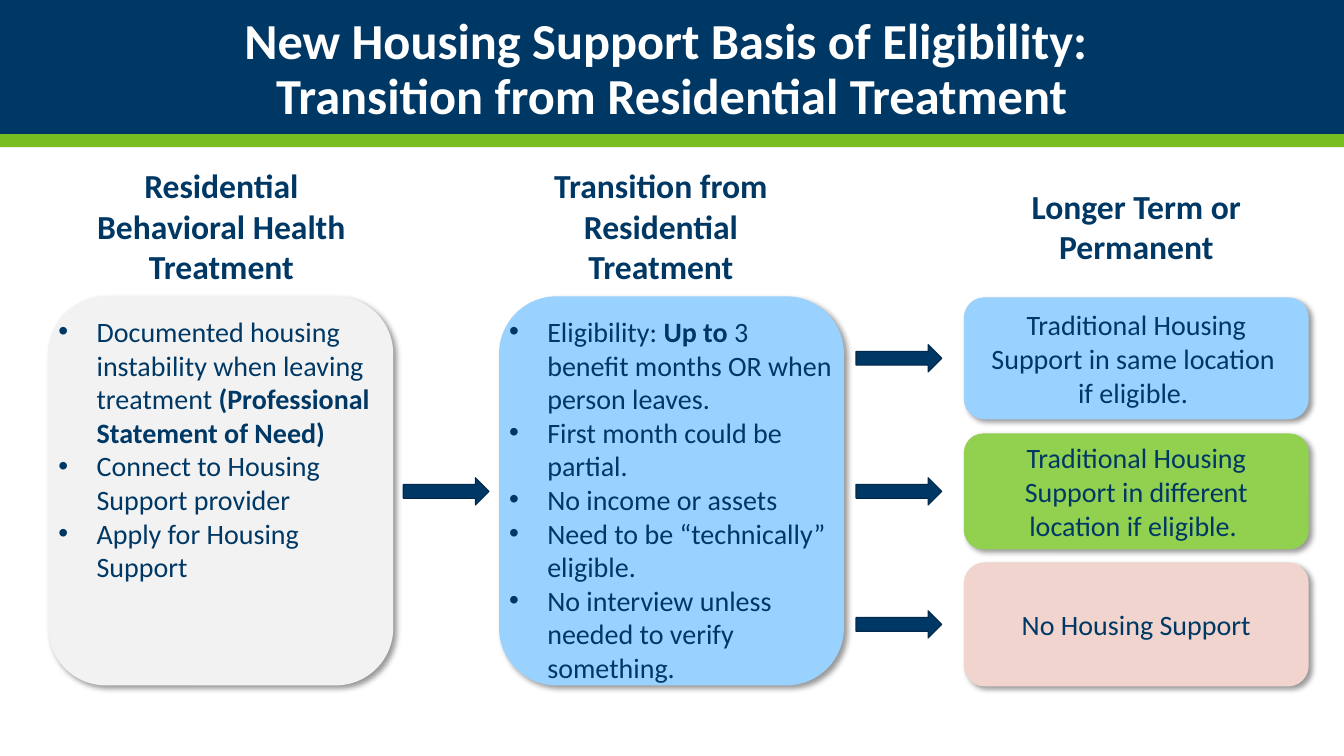
from lxml import etree
from pptx import Presentation
from pptx.dml.color import RGBColor
from pptx.enum import shapes, text
from pptx.oxml.ns import qn
from pptx.util import Inches, Pt

# Content: a paragraph is a list of (text, bold) runs
TITLE = "New Housing Support Basis of Eligibility: \vTransition from Residential Treatment"
HEADINGS = [  # text, left, top, width, height
    ("Residential Behavioral Health Treatment", 0.77, 1.59, 2.85, 1.31),
    ("Transition from Residential Treatment", 5.13, 1.59, 2.85, 1.31),
    ("Longer Term or Permanent", 10.13, 1.79, 2.28, 0.91),
]
STAGES = [  # left, colour, bullets
    (0.48, "grey", [
        [("Documented housing instability when leaving treatment ", False),
         ("(Professional Statement of Need)", True)],
        [("Connect to Housing Support provider", False)],
        [("Apply for Housing Support", False)],
    ]),
    (4.95, "blue", [
        [("Eligibility: ", False), ("Up to ", True),
         ("3 benefit months OR when person leaves.", False)],
        [("First month could be partial.", False)],
        [("No income or assets", False)],
        [("Need to be “technically” eligible.", False)],
        [("No interview unless needed to verify something.", False)],
    ]),
]
OUTCOMES = [  # top, height, colour, lines
    (2.95, 1.21, "blue", ["Traditional Housing Support in same location ", "if eligible. "]),
    (4.3, 1.15, "green", ["Traditional Housing Support in different location if eligible. "]),
    (5.58, 1.23, "pink", ["No Housing Support"]),
]
COLORS = dict(navy="003865", lime="78BE21", grey="F2F2F2", blue="99D1FF", green="92D050",
              pink="F0D4CD", edge="00294B", white="FFFFFF")
BOX_W, STAGE_TOP, STAGE_H, OUTCOME_LEFT = 3.42, 2.94, 3.86, 9.56
ARROW_W, ARROW_H, ARROW_MID, ARROW_STEP = 0.85, 0.27, 4.74, 1.32
KIND = shapes.MSO_SHAPE
CENTER, LEFT = text.PP_ALIGN.CENTER, text.PP_ALIGN.LEFT

prs = Presentation()
prs.slide_width, prs.slide_height = Inches(13.33), Inches(7.5)
s = prs.slides.add_slide(prs.slide_layouts[6])


def rgb(name):
    return RGBColor.from_string(COLORS[name])


def add_shape(kind, box, fill, line=None, shadow=False):
    sp = s.shapes.add_shape(kind, *map(Inches, box))
    sp.fill.solid()
    sp.fill.fore_color.rgb = rgb(fill)
    if line:
        sp.line.color.rgb = rgb(line)
        sp.line.width = Pt(0.85)
    else:
        sp.line.fill.background()
    sp.shadow.inherit = False
    if shadow:
        effects = sp._element.spPr.find(qn("a:effectLst"))
        outer = etree.SubElement(effects, qn("a:outerShdw"), blurRad=str(Pt(4)),
                                 dist=str(Pt(3)), dir=str(45 * 60000), algn="tl", rotWithShape="0")
        color = etree.SubElement(outer, qn("a:srgbClr"), val="000000")
        etree.SubElement(color, qn("a:alpha"), val="40000")
    return sp


def write(sp, paragraphs, size, color="navy", align=CENTER, middle=False, bullets=False, spacing=None):
    tf = sp.text_frame
    tf.word_wrap = True
    tf.vertical_anchor = text.MSO_ANCHOR.MIDDLE if middle else text.MSO_ANCHOR.TOP
    for i, runs in enumerate(paragraphs):
        p = tf.paragraphs[0] if i == 0 else tf.add_paragraph()
        p.alignment, p.line_spacing = align, spacing
        if bullets:
            pPr = p._p.get_or_add_pPr()
            pPr.set("marL", str(Inches(0.38)))
            pPr.set("indent", str(Inches(-0.38)))
            etree.SubElement(pPr, qn("a:buFont"), typeface="Arial")
            etree.SubElement(pPr, qn("a:buChar"), char="•")
        for words, bold in runs:
            for n, part in enumerate(words.split("\v")):
                if n:
                    p.add_line_break()
                r = p.add_run()
                r.text = part
                for key, value in dict(name="Calibri", size=Pt(size), bold=bold).items():
                    setattr(r.font, key, value)
                r.font.color.rgb = rgb(color)


def add_text(box, paragraphs, size, **fmt):
    write(s.shapes.add_textbox(*map(Inches, box)), paragraphs, size, **fmt)


# Title band
add_shape(KIND.RECTANGLE, (0, 0, 13.33, 1.33), "navy")
add_shape(KIND.RECTANGLE, (0, 1.33, 13.33, 0.13), "lime")
add_text((1, 0.2, 11.33, 1), [[(TITLE, True)]], 36, color="white", middle=True, spacing=0.9)

# Column headings
for heading, *box in HEADINGS:
    add_text(box, [[(heading, True)]], 24)

# Stage boxes with bullets
for left, fill, items in STAGES:
    add_shape(KIND.ROUNDED_RECTANGLE, (left, STAGE_TOP, BOX_W, STAGE_H), fill, shadow=True)
    add_text((left, 3.07, BOX_W, 3.73), items, 20, align=LEFT, bullets=True)

# Outcome boxes
for top, height, fill, lines in OUTCOMES:
    sp = add_shape(KIND.ROUNDED_RECTANGLE, (OUTCOME_LEFT, top, BOX_W, height), fill, shadow=True)
    write(sp, [[(line, False)] for line in lines], 20, middle=True)

# Arrows: one between the stages, three to the outcomes
for left, step in [(4, 0), (8.49, -1), (8.49, 0), (8.49, 1)]:
    add_shape(KIND.RIGHT_ARROW, (left, ARROW_MID + step * ARROW_STEP, ARROW_W, ARROW_H),
              "navy", line="edge")

prs.save("out.pptx")
